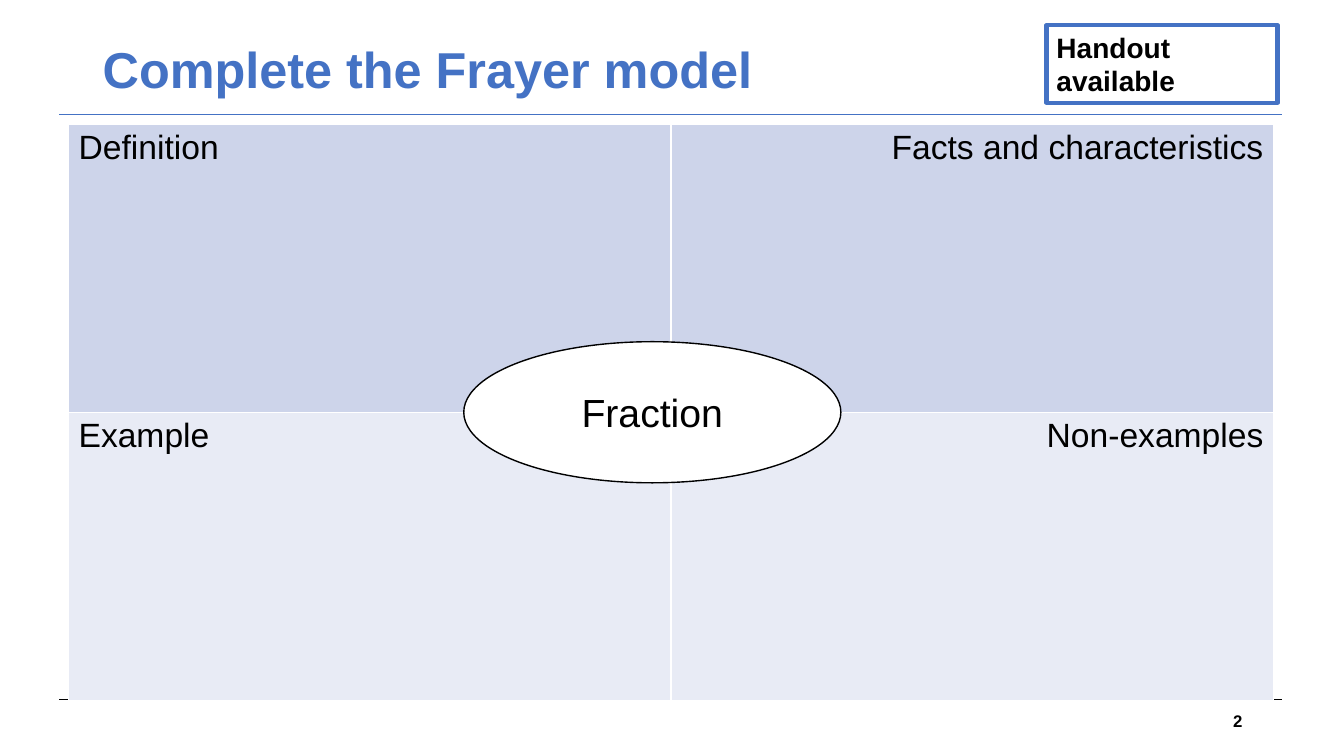
from pptx import Presentation
from pptx.dml.color import RGBColor
from pptx.enum.shapes import MSO_CONNECTOR, MSO_SHAPE
from pptx.enum.text import MSO_ANCHOR, PP_ALIGN
from pptx.util import Inches, Pt
from lxml.etree import SubElement
from pptx.oxml.ns import qn

BLUE, BLACK, WHITE = "4472C4", "000000", "FFFFFF"
LEFT, RIGHT = PP_ALIGN.LEFT, PP_ALIGN.RIGHT
TOP, MIDDLE = MSO_ANCHOR.TOP, MSO_ANCHOR.MIDDLE


def color(code):
    return RGBColor.from_string(code)


def write(frame, text, size, tint=BLACK, bold=False, align=LEFT):
    frame.text = text
    frame.word_wrap = True
    para = frame.paragraphs[0]
    para.alignment = align
    for run in para.runs:
        font = run.font
        font.name, font.size, font.bold = "Arial", Pt(size), bold
        font.color.rgb = color(tint)
    return para


def add_rule(slide, y, tint):
    rule = slide.shapes.add_connector(
        MSO_CONNECTOR.STRAIGHT, Inches(0.59), Inches(y), Inches(12.72), Inches(y))
    rule.line.color.rgb = color(tint)
    rule.line.width = Pt(0.75)
    SubElement(rule._element.spPr, qn("a:effectLst"))


def add_text(slide, box, text, size, **style):
    frame = slide.shapes.add_textbox(*map(Inches, box)).text_frame
    frame.vertical_anchor = MIDDLE
    return write(frame, text, size, **style)


def add_box(slide, kind, box, text, size, fill, line, width, anchor, **style):
    shape = slide.shapes.add_shape(kind, *map(Inches, box))
    shape.shadow.inherit = False
    if fill:
        shape.fill.solid()
        shape.fill.fore_color.rgb = color(fill)
    else:
        shape.fill.background()
    shape.line.color.rgb = color(line)
    shape.line.width = Pt(width)
    shape.text_frame.vertical_anchor = anchor
    write(shape.text_frame, text, size, **style)


def add_grid(slide, box, rows, fills):
    grid = slide.shapes.add_table(len(rows), 2, *map(Inches, box)).table
    grid.first_row = grid.horz_banding = False
    for r, (row, fill) in enumerate(zip(rows, fills)):
        for c, (text, align) in enumerate(zip(row, (LEFT, RIGHT))):
            cell = grid.cell(r, c)
            cell.fill.solid()
            cell.fill.fore_color.rgb = color(fill)
            write(cell.text_frame, text, 24, align=align)


def main():
    deck = Presentation()
    deck.slide_width, deck.slide_height = Inches(13.33), Inches(7.5)
    slide = deck.slides.add_slide(deck.slide_layouts[6])

    # Rules, title and page number
    add_rule(slide, 6.94, BLACK)
    add_rule(slide, 1.14, BLUE)
    title = add_text(slide, (0.92, 0.4, 11.5, 0.64), "Complete the Frayer model",
                     36, tint=BLUE, bold=True)
    title.line_spacing = 0.9
    add_text(slide, (9.42, 6.95, 3, 0.4), "2", 12, bold=True, align=RIGHT)

    # Frayer model: four quadrants around the term
    add_grid(slide, (0.68, 1.23, 11.95, 5.72),
             [("Definition", "Facts and characteristics"),
              ("Example", "Non-examples")],
             ("CDD4EA", "E8EBF5"))
    add_box(slide, MSO_SHAPE.OVAL, (4.6, 3.39, 3.74, 1.4), "Fraction", 28,
            WHITE, BLACK, 1, MIDDLE, align=PP_ALIGN.CENTER)

    # Handout note
    add_box(slide, MSO_SHAPE.RECTANGLE, (10.38, 0.25, 2.29, 0.77),
            "Handout\vavailable", 20, None, BLUE, 3, TOP, bold=True)

    deck.save("out.pptx")


if __name__ == "__main__":
    main()
